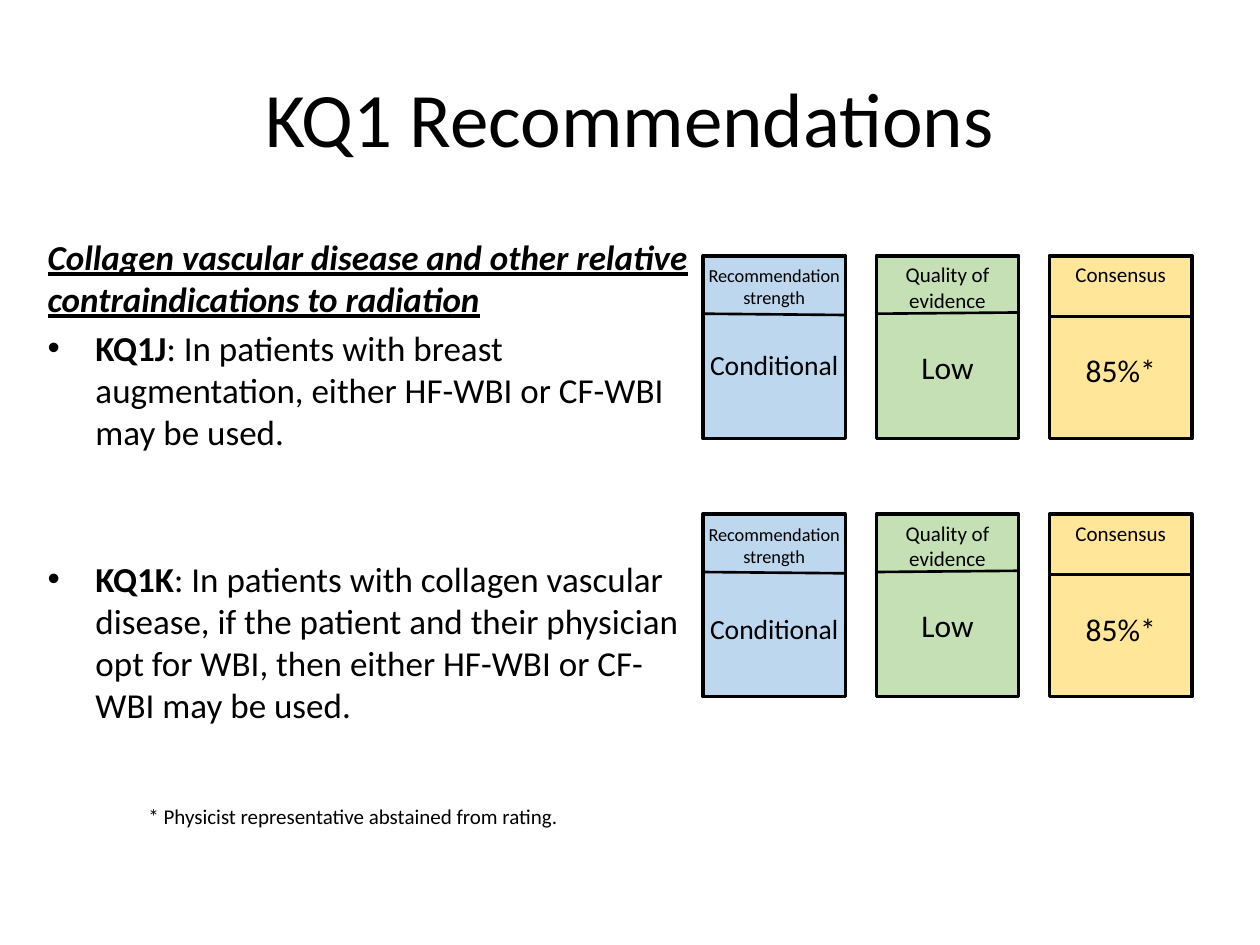
from dataclasses import dataclass

from lxml.etree import SubElement
from pptx import Presentation
from pptx.dml.color import RGBColor
from pptx.enum.shapes import MSO_CONNECTOR, MSO_SHAPE
from pptx.enum.text import MSO_ANCHOR, PP_ALIGN
from pptx.oxml.ns import qn
from pptx.util import Inches, Pt

FONT = "Calibri"
BLACK = "000000"
GRID_LEFT, GRID_TOP = 5.58, 2.03
COLUMN_STEP, ROW_STEP = 1.375, 2.05
CARD_WIDTH, CARD_HEIGHT = 1.13, 1.45


@dataclass
class Card:
    label: str
    label_size: float
    label_insets: tuple
    value: str
    value_size: float
    fill: str
    divider: tuple
    value_top: float


CARDS = [
    Card("Recommendation strength", 10.5, (0.04, 0.07), "Conditional", 15.75,
         "BDD7EE", (0.46, 0.47), 0.45),
    Card("Quality of evidence", 12, (0.1, 0.05), "Low", 18,
         "C5E0B4", (0.46, 0.45), 0.45),
    Card("Consensus", 12, (0.1, 0.05), "85%*", 18,
         "FFE699", (0.48, 0.48), 0.48),
]
VALUE_INSETS = [(0.28, 0.28, 0.28), (0.33, 0.28, 0.28)]


def color(value):
    return RGBColor.from_string(value)


def set_font(font, size):
    font.name = FONT
    font.size = Pt(size)
    font.color.rgb = color(BLACK)


def add_text_box(shapes, left, top, width, height, insets=(0.1, 0.05)):
    frame = shapes.add_textbox(
        Inches(left), Inches(top), Inches(width), Inches(height)).text_frame
    frame.word_wrap = True
    frame.vertical_anchor = MSO_ANCHOR.TOP
    frame.margin_left = frame.margin_right = Inches(insets[0])
    frame.margin_top = frame.margin_bottom = Inches(insets[1])
    return frame


def write(frame, text, size, alignment=PP_ALIGN.CENTER):
    paragraph = frame.paragraphs[0]
    paragraph.text = text
    paragraph.alignment = alignment
    set_font(paragraph.font, size)
    return paragraph


def add_divider(shapes, left, top, ends):
    line = shapes.add_connector(
        MSO_CONNECTOR.STRAIGHT, Inches(left), Inches(top + ends[0]),
        Inches(left + CARD_WIDTH), Inches(top + ends[1]))
    line.line.color.rgb = color(BLACK)
    line.line.width = Pt(1.5)
    SubElement(line._element.spPr, qn("a:effectLst"))


def add_card(shapes, card, left, top, value_inset):
    box = shapes.add_shape(MSO_SHAPE.RECTANGLE, Inches(left), Inches(top),
                           Inches(CARD_WIDTH), Inches(CARD_HEIGHT))
    box.shadow.inherit = False
    box.fill.solid()
    box.fill.fore_color.rgb = color(card.fill)
    box.line.color.rgb = color(BLACK)
    box.line.width = Pt(2)
    add_divider(shapes, left, top, card.divider)
    label = add_text_box(shapes, left, top, CARD_WIDTH, 0.5, card.label_insets)
    write(label, card.label, card.label_size)
    value = add_text_box(shapes, left, top + card.value_top, CARD_WIDTH, 0.63,
                         (0.04, 0.05))
    value.margin_top = Inches(value_inset)
    write(value, card.value, card.value_size)


def add_card_row(slide, row, value_insets):
    shapes = slide.shapes.add_group_shape().shapes
    for column, (card, inset) in enumerate(zip(CARDS, value_insets)):
        add_card(shapes, card, GRID_LEFT + column * COLUMN_STEP,
                 GRID_TOP + row * ROW_STEP, inset)


def add_recommendation(frame, name, text, space_before):
    paragraph = frame.add_paragraph()
    properties = paragraph._p.get_or_add_pPr()
    properties.set("marL", str(Inches(0.38)))
    properties.set("indent", str(-Inches(0.38)))
    paragraph.space_before = Pt(space_before)
    SubElement(properties, qn("a:buFont")).set("typeface", "Arial")
    SubElement(properties, qn("a:buChar")).set("char", "•")
    set_font(paragraph.font, 20)
    name_run = paragraph.add_run()
    name_run.text = name
    name_run.font.bold = True
    paragraph.add_run().text = f": {text}"


def add_title(slide, text):
    title = slide.shapes.title
    title.left, title.top = Inches(0.5), Inches(0.3)
    title.width, title.height = Inches(9), Inches(1.25)
    title.text_frame.vertical_anchor = MSO_ANCHOR.MIDDLE
    write(title.text_frame, text, 44)


def add_body(slide):
    frame = add_text_box(slide.shapes, 0.28, 1.82, 5.3, 3.87)
    heading = write(frame, "Collagen vascular disease and other relative "
                    "contraindications to radiation", 20, PP_ALIGN.LEFT)
    heading.font.bold = heading.font.italic = heading.font.underline = True
    add_recommendation(
        frame, "KQ1J", "In patients with breast augmentation, either HF-WBI "
        "or CF-WBI may be used.", 4)
    add_recommendation(
        frame, "KQ1K", "In patients with collagen vascular disease, if the "
        "patient and their physician opt for WBI, then either HF-WBI or "
        "CF-WBI may be used.", 60)


def main():
    presentation = Presentation()
    presentation.slide_width = Inches(10)
    presentation.slide_height = Inches(7.5)
    slide = presentation.slides.add_slide(presentation.slide_layouts[5])
    add_title(slide, "KQ1 Recommendations")
    add_body(slide)
    for row, value_insets in enumerate(VALUE_INSETS):
        add_card_row(slide, row, value_insets)
    footnote = add_text_box(slide.shapes, 1.08, 6.33, 3.46, 0.3)
    write(footnote, "* Physicist representative abstained from rating.", 12,
          PP_ALIGN.LEFT)
    presentation.save("out.pptx")


if __name__ == "__main__":
    main()
